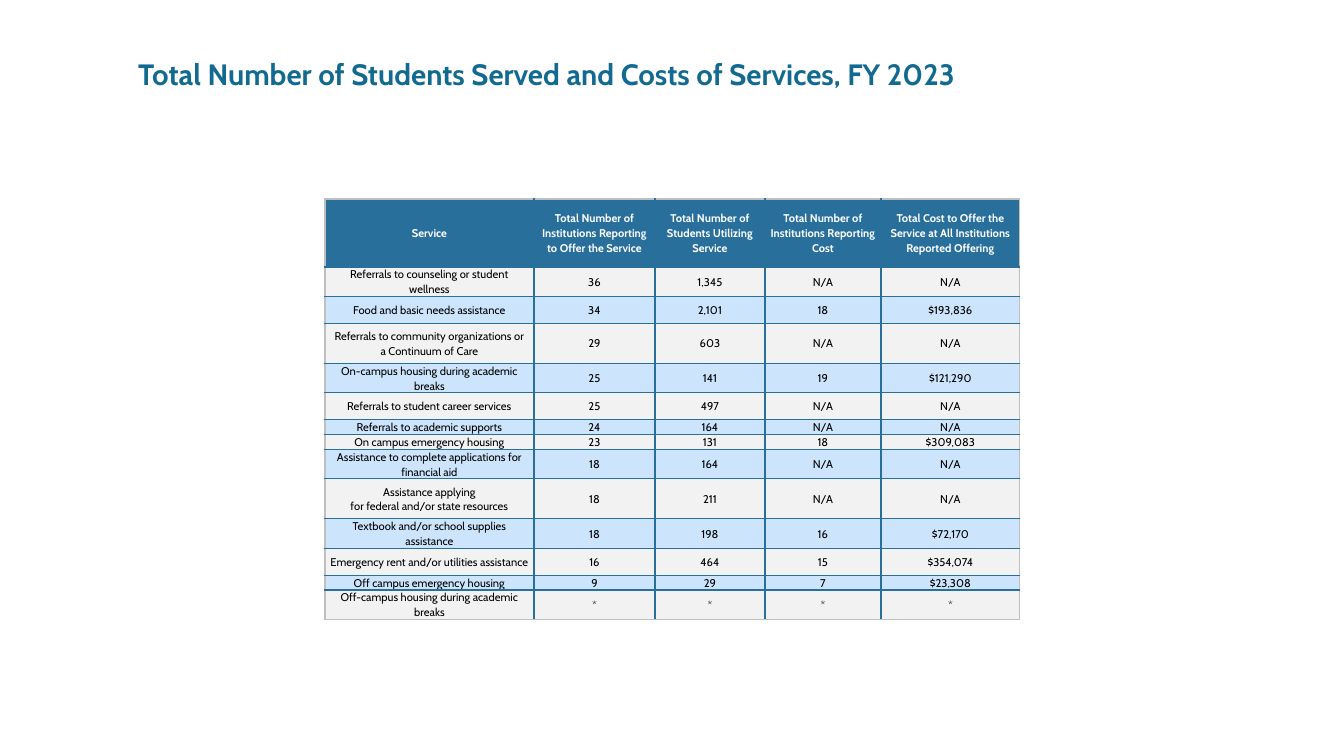
"""Build a slide with a table of student services, their reach and their cost."""
from lxml import etree
from pptx import Presentation
from pptx.dml.color import RGBColor
from pptx.enum.text import MSO_ANCHOR, MSO_AUTO_SIZE, PP_ALIGN
from pptx.oxml.ns import qn
from pptx.util import Emu, Pt

LEFT, CENTER = PP_ALIGN.LEFT, PP_ALIGN.CENTER
MIDDLE = MSO_ANCHOR.MIDDLE
NO_FIT = MSO_AUTO_SIZE.NONE
SCALE = 914400 / 100.8
FONT = "Cabin"
COLORS = {
    "title": "136A91",
    "head": "28709B",
    "edge": "BFBFBF",
    "gray": "F2F2F2",
    "blue": "CCE5FC",
    "white": "FFFFFF",
    "black": "000000",
}
TITLE = "Total Number of Students Served and Costs of Services, FY 2023"
WIDTHS = [209, 121, 110, 116, 139]
HEAD = [
    "Service",
    "Total Number of Institutions Reporting to Offer the Service",
    "Total Number of Students Utilizing Service",
    "Total Number of Institutions Reporting Cost",
    "Total Cost to Offer the Service at All Institutions Reported Offering",
]
ROWS = [
    (68, HEAD),
    (27, ["Referrals to counseling or student wellness", "36", "1,345", "N/A", "N/A"]),
    (27, ["Food and basic needs assistance", "34", "2,101", "18", "$193,836"]),
    (40, ["Referrals to community organizations or\na Continuum of Care",
          "29", "603", "N/A", "N/A"]),
    (27, ["On-campus housing during academic breaks", "25", "141", "19", "$121,290"]),
    (27, ["Referrals to student career services", "25", "497", "N/A", "N/A"]),
    (13, ["Referrals to academic supports", "24", "164", "N/A", "N/A"]),
    (13, ["On campus emergency housing", "23", "131", "18", "$309,083"]),
    (27, ["Assistance to complete applications for financial aid",
          "18", "164", "N/A", "N/A"]),
    (40, ["Assistance applying\nfor federal and/or state resources",
          "18", "211", "N/A", "N/A"]),
    (27, ["Textbook and/or school supplies assistance", "18", "198", "16", "$72,170"]),
    (27, ["Emergency rent and/or utilities assistance", "16", "464", "15", "$354,074"]),
    (13, ["Off campus emergency housing", "9", "29", "7", "$23,308"]),
    (27, ["Off-campus housing during academic breaks", "*", "*", "*", "*"]),
]


def px(count):
    """Turn pixels into EMU."""
    return Emu(round(count * SCALE))


def rgb(name):
    """Look up a colour by name."""
    return RGBColor.from_string(COLORS[name])


def write(frame, words, size=8, color="black", bold=False, align=CENTER, space=1.07):
    """Fill a text frame, one paragraph per line of words."""
    frame.text = words
    frame.word_wrap = True
    for para in frame.paragraphs:
        para.alignment = align
        para.line_spacing = space
        for run in para.runs:
            font = run.font
            font.name, font.size, font.bold = FONT, Pt(size), bold
            font.color.rgb = rgb(color)


def border(cell, sides):
    """Draw one-point borders, given as side and colour name."""
    props = cell._tc.get_or_add_tcPr()
    for side, name in sides.items():
        line = etree.SubElement(props, qn(f"a:ln{side}"), w=str(Pt(1)))
        fill = etree.SubElement(line, qn("a:solidFill"))
        etree.SubElement(fill, qn("a:srgbClr"), val=COLORS[name])


def add_title(slide):
    """Place and fill the title."""
    title = slide.shapes.title
    title.left, title.top, title.width, title.height = map(px, (128, 35, 1159, 82))
    frame = title.text_frame
    write(frame, TITLE, size=21, color="title", bold=True, align=LEFT, space=0.9)
    frame.auto_size = NO_FIT
    frame.vertical_anchor = MIDDLE


def add_grid(slide):
    """Add the table of services."""
    high = sum(row[0] for row in ROWS)
    box = map(px, (325, 199, sum(WIDTHS), high))
    table = slide.shapes.add_table(len(ROWS), len(WIDTHS), *box).table
    table.horz_banding = False
    for col, width in zip(table.columns, WIDTHS):
        col.width = px(width)
    last_row, last_col = len(ROWS) - 1, len(WIDTHS) - 1
    for r, (height, values) in enumerate(ROWS):
        table.rows[r].height = px(height)
        is_head = r == 0
        fill = "head" if is_head else ("blue", "gray")[r % 2]
        for c, value in enumerate(values):
            cell = table.cell(r, c)
            cell.margin_left = cell.margin_right = px(5)
            cell.margin_top = cell.margin_bottom = 0
            cell.vertical_anchor = MIDDLE
            write(cell.text_frame, value, color="white" if is_head else "black",
                  bold=is_head)
            outer = {"L": c == 0, "R": c == last_col, "T": is_head, "B": r == last_row}
            border(cell, {side: "edge" if out else "head" for side, out in outer.items()})
            cell.fill.solid()
            cell.fill.fore_color.rgb = rgb(fill)


def main():
    """Build and save the slide."""
    deck = Presentation()
    deck.slide_width, deck.slide_height = px(1344), px(756)
    slide = deck.slides.add_slide(deck.slide_layouts[5])
    add_title(slide)
    add_grid(slide)
    deck.save("out.pptx")


if __name__ == "__main__":
    main()
